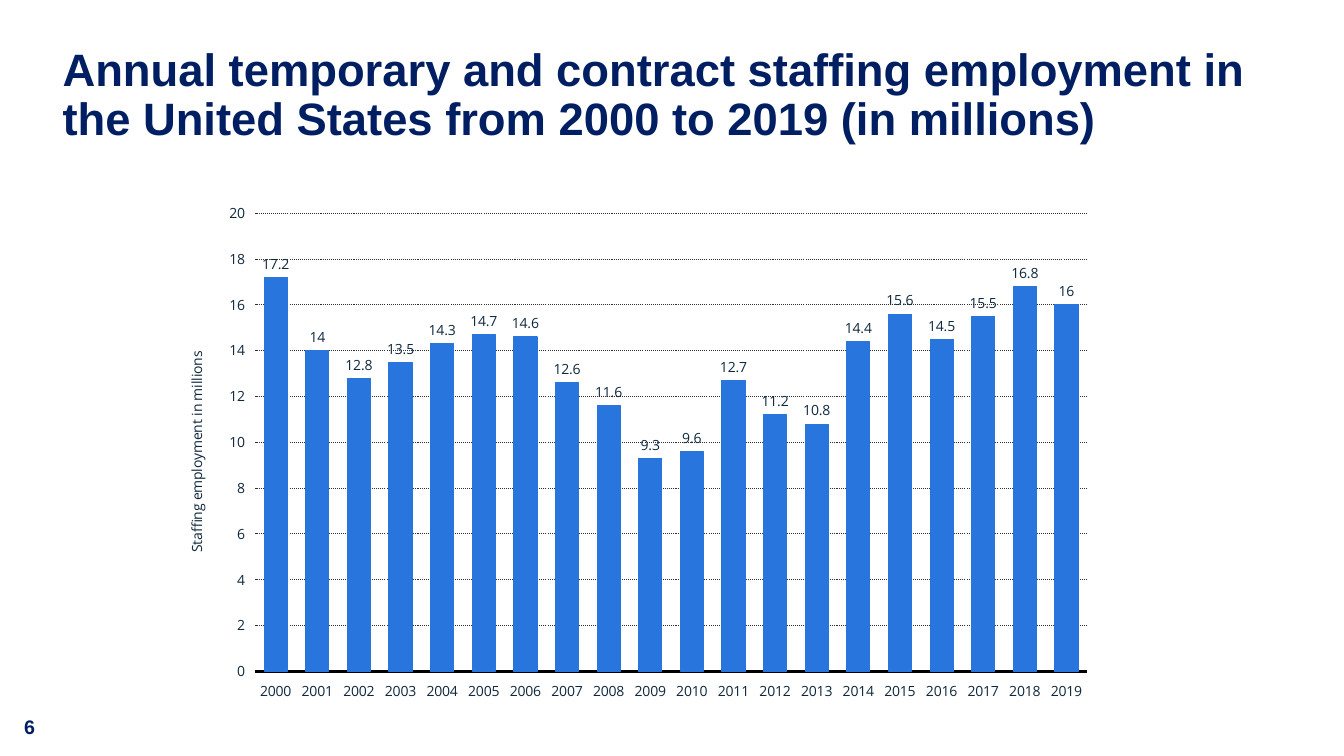
from pptx import Presentation
from pptx.chart.data import CategoryChartData
from pptx.dml.color import RGBColor
from pptx.enum.chart import XL_CHART_TYPE, XL_LABEL_POSITION, XL_TICK_LABEL_POSITION, XL_TICK_MARK
from pptx.enum.dml import MSO_LINE
from pptx.util import Inches, Pt

COLUMN_CLUSTERED = XL_CHART_TYPE.COLUMN_CLUSTERED
OUTSIDE_END = XL_LABEL_POSITION.OUTSIDE_END
LOW = XL_TICK_LABEL_POSITION.LOW
NO_TICKS = XL_TICK_MARK.NONE
DOTTED = MSO_LINE.ROUND_DOT

NAVY = RGBColor(0x00, 0x1E, 0x62)
BLUE = RGBColor(0x28, 0x75, 0xDD)
INK = RGBColor(0x0F, 0x28, 0x3E)
GRAY = RGBColor(0x57, 0x57, 0x57)
GRID = RGBColor(0x2F, 0x2F, 0x2F)
BLACK = RGBColor(0x00, 0x00, 0x00)

TITLE = ("Annual temporary and contract staffing employment in "
         "the United States from 2000 to 2019 (in millions)")
YEARS = [str(year) for year in range(2000, 2020)]
EMPLOYMENT = [17.2, 14, 12.8, 13.5, 14.3, 14.7, 14.6, 12.6, 11.6, 9.3,
              9.6, 12.7, 11.2, 10.8, 14.4, 15.6, 14.5, 15.5, 16.8, 16]


def set_font(font, name, size, color, bold=False):
    font.name = name
    font.size = Pt(size)
    font.color.rgb = color
    font.bold = bold


def style_line(line, color, width):
    line.color.rgb = color
    line.width = Pt(width)


def add_text(slide, text, left, top, width, height, size, margin=None):
    box = slide.shapes.add_textbox(Inches(left), Inches(top), Inches(width), Inches(height))
    frame = box.text_frame
    frame.word_wrap = True
    if margin is not None:
        frame.margin_left = frame.margin_right = Inches(margin)
        frame.margin_top = frame.margin_bottom = Inches(margin)
    paragraph = frame.paragraphs[0]
    paragraph.text = text
    set_font(paragraph.font, "Arial", size, NAVY, bold=True)
    return paragraph


def style_axis(axis):
    axis.major_tick_mark = NO_TICKS
    axis.minor_tick_mark = NO_TICKS
    axis.tick_label_position = LOW
    set_font(axis.tick_labels.font, "Open Sans", 10, INK)


def style_value_axis(axis):
    style_axis(axis)
    axis.minimum_scale = 0
    axis.maximum_scale = 20
    axis.major_unit = 2
    axis.tick_labels.number_format = "#,##0"
    axis.tick_labels.number_format_is_linked = False
    axis.format.line.fill.background()
    grid_line = axis.major_gridlines.format.line
    style_line(grid_line, GRID, 0.75)
    grid_line.dash_style = DOTTED
    paragraph = axis.axis_title.text_frame.paragraphs[0]
    paragraph.text = "Staffing employment in millions"
    set_font(paragraph.font, "Open Sans", 10, INK)


def style_columns(plot):
    plot.gap_width = 80
    plot.overlap = -30
    plot.vary_by_categories = False
    series = plot.series[0]
    series.format.fill.solid()
    series.format.fill.fore_color.rgb = BLUE
    style_line(series.format.line, BLUE, 0.75)
    labels = series.data_labels
    labels.show_value = True
    labels.position = OUTSIDE_END
    set_font(labels.font, "Open Sans", 10, INK)


def add_employment_chart(slide):
    data = CategoryChartData()
    data.categories = YEARS
    data.add_series("Series 1", EMPLOYMENT)
    chart = slide.shapes.add_chart(
        COLUMN_CLUSTERED, Inches(1.64), Inches(1.92), Inches(9.33), Inches(5.13), data).chart
    chart.has_legend = False
    chart.has_title = False
    set_font(chart.font, "Calibri", 18, GRAY)
    style_axis(chart.category_axis)
    style_line(chart.category_axis.format.line, BLACK, 2)
    style_value_axis(chart.value_axis)
    style_columns(chart.plots[0])


def main():
    presentation = Presentation()
    presentation.slide_width = Inches(13.33)
    presentation.slide_height = Inches(7.5)
    slide = presentation.slides.add_slide(presentation.slide_layouts[6])
    add_text(slide, "6", 0.14, 7.04, 0.66, 0.34, 14)
    add_employment_chart(slide)
    title = add_text(slide, TITLE, 0.62, 0.47, 12.08, 0.89, 32.4, margin=0)
    title.line_spacing = 0.9
    presentation.save("out.pptx")


if __name__ == "__main__":
    main()
